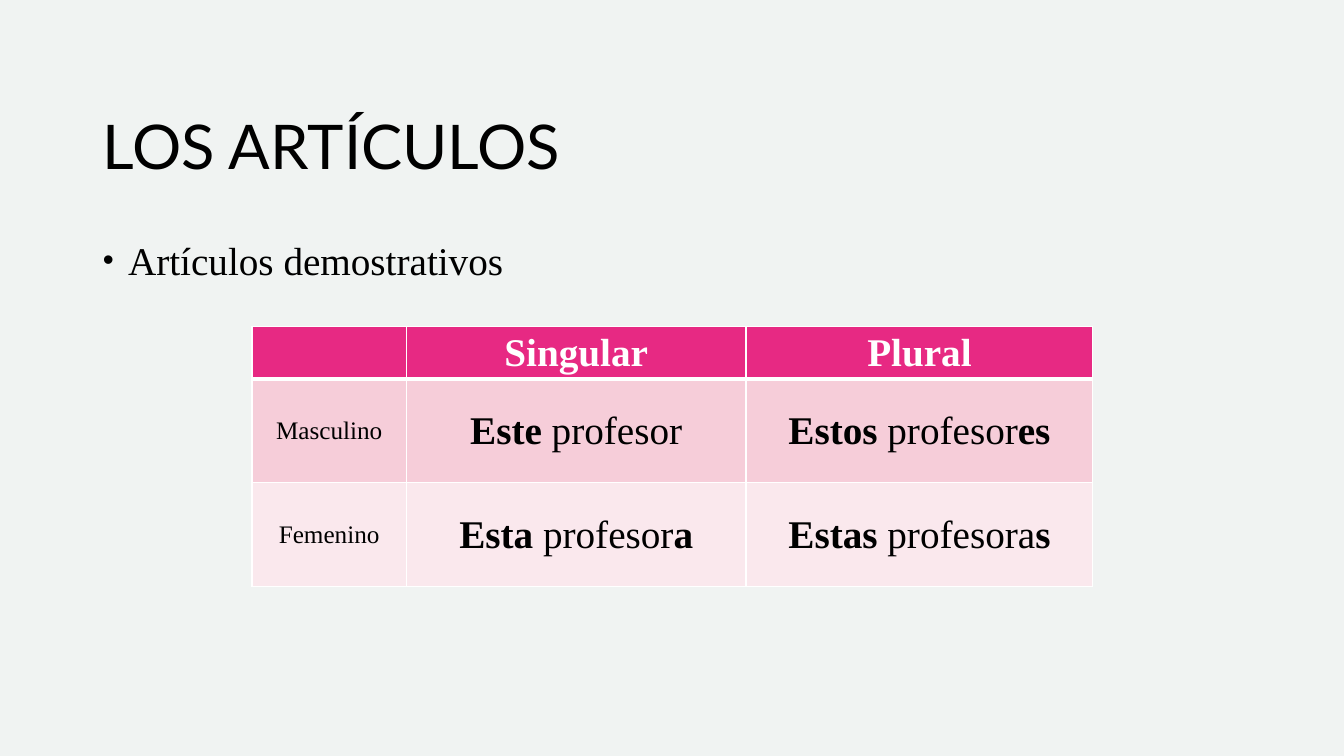
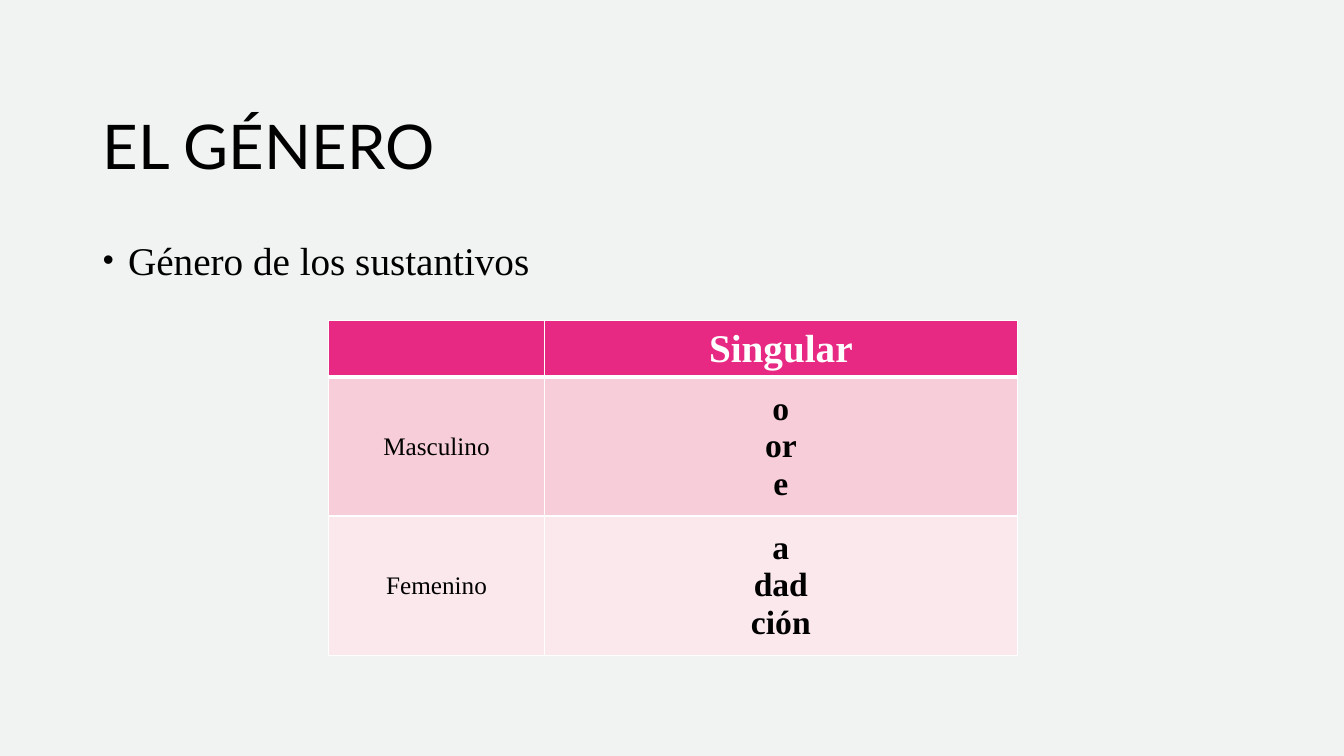
from pptx import Presentation
from pptx.dml.color import RGBColor
from pptx.enum import text as t
from pptx.oxml import parse_xml
from pptx.oxml.ns import nsdecls
from pptx.util import Inches, Pt

BACKGROUND, BLACK, WHITE = "F0F3F2", "000000", "FFFFFF"
HEADER, BANDS = "E72983", ("F6CDD9", "FAE8ED")
TITLE_FONT, BODY_FONT = "Lato", "Times New Roman"
TITLE_BOX = (0.92, 0.64, 11.5, 1.22)
BODY_BOX = (0.92, 2.25, 11.5, 4.5)

SLIDES = [
    dict(title="LOS ARTÍCULOS", topic="Artículos demostrativos",
         at=(2.5, 3.24), cols=(1.53, 3.37, 3.44), heights=(0.52, 1.03), size=28,
         rows=[["", "Singular", "Plural"],
               ["Masculino", "*Este* profesor", "*Estos* profesor*es*"],
               ["Femenino", "*Esta* profesor*a*", "*Estas* profesora*s*"]]),
    dict(title="EL GÉNERO", topic="Género de los sustantivos",
         at=(3.26, 3.18), cols=(2.14, 4.69), heights=(0.56, 1.38), size=24,
         rows=[["", "Singular"],
               ["Masculino", "*o*\n*or*\n*e*"],
               ["Femenino", "*a*\n*dad*\n*ción*"]]),
]


def rgb(color):
    return RGBColor.from_string(color)


def set_attrs(obj, values):
    for name, value in values.items():
        setattr(obj, name, value)


def write(p, text, size, font, color=BLACK):
    """Add runs to a paragraph; parts between asterisks are bold."""
    for i, part in enumerate(text.split("*")):
        if part:
            r = p.add_run()
            r.text = part
            set_attrs(r.font, dict(size=Pt(size), name=font, bold=i % 2 == 1))
            r.font.color.rgb = rgb(color)


def fill_placeholder(sp, box, text, size, font, frame, paragraph):
    set_attrs(sp, dict(zip(("left", "top", "width", "height"), map(Inches, box))))
    tf = sp.text_frame
    set_attrs(tf, dict(auto_size=t.MSO_AUTO_SIZE.NONE, word_wrap=True, **frame))
    p = tf.paragraphs[0]
    set_attrs(p, dict(alignment=t.PP_ALIGN.LEFT, **paragraph))
    write(p, text, size, font)
    return p


def add_title(s, text):
    fill_placeholder(s.shapes.title, TITLE_BOX, text, 44, TITLE_FONT,
                     dict(vertical_anchor=t.MSO_ANCHOR.BOTTOM),
                     dict(line_spacing=0.9))


def add_topic(s, text):
    p = fill_placeholder(s.placeholders[1], BODY_BOX, text, 28, BODY_FONT,
                         dict(vertical_anchor=t.MSO_ANCHOR.TOP),
                         dict(line_spacing=1.1, space_before=Pt(10)))
    pPr = p._p.get_or_add_pPr()
    pPr.set("marL", str(Inches(0.25)))
    pPr.set("indent", str(Inches(-0.25)))
    for bullet in ('buSzPct {} val="80000"', 'buFont {} typeface="Arial"',
                   'buChar {} char="•"'):
        pPr.append(parse_xml(f"<a:{bullet.format(nsdecls('a'))}/>"))


def set_borders(cell, widths):
    """Draw white borders with widths in points, keyed by side."""
    tcPr = cell._tc.get_or_add_tcPr()
    for i, side in enumerate("LRTB"):
        tcPr.insert(i, parse_xml(
            f'<a:ln{side} {nsdecls("a")} w="{Pt(widths.get(side, 1))}"><a:solidFill>'
            f'<a:srgbClr val="{WHITE}"/></a:solidFill></a:ln{side}>'))


def add_cell(cell, text, size, color, fill, borders):
    set_attrs(cell, dict(vertical_anchor=t.MSO_ANCHOR.MIDDLE,
                         margin_top=Inches(0.03), margin_bottom=Inches(0.03)))
    cell.fill.solid()
    cell.fill.fore_color.rgb = rgb(fill)
    set_borders(cell, borders)
    tf = cell.text_frame
    for i, line in enumerate(text.split("\n")):
        p = tf.add_paragraph() if i else tf.paragraphs[0]
        p.alignment = t.PP_ALIGN.CENTER
        write(p, line, size, BODY_FONT, color)


def add_grammar_table(s, at, cols, heights, size, rows):
    header_height, row_height = heights
    row_heights = [header_height] + [row_height] * (len(rows) - 1)
    box = (*at, sum(cols), sum(row_heights))
    table = s.shapes.add_table(len(rows), len(cols), *map(Inches, box)).table
    for column, width in zip(table.columns, cols):
        column.width = Inches(width)
    for i, (row, height) in enumerate(zip(rows, row_heights)):
        table.rows[i].height = Inches(height)
        for j, text in enumerate(row):
            cell = table.cell(i, j)
            if i == 0:
                add_cell(cell, f"*{text}*", 28, WHITE, HEADER, {"B": 3})
            else:
                add_cell(cell, text, size if j else 18, BLACK,
                         BANDS[(i - 1) % 2], {"T": 3} if i == 1 else {})


def add_grammar_slide(prs, title, topic, **table):
    s = prs.slides.add_slide(prs.slide_layouts[1])
    add_title(s, title)
    add_topic(s, topic)
    add_grammar_table(s, **table)


def main():
    prs = Presentation()
    set_attrs(prs, dict(slide_width=Inches(13.33), slide_height=Inches(7.5)))
    background = prs.slide_master.background.fill
    background.solid()
    background.fore_color.rgb = rgb(BACKGROUND)
    for content in SLIDES:
        add_grammar_slide(prs, **content)
    prs.save("out.pptx")


if __name__ == "__main__":
    main()
